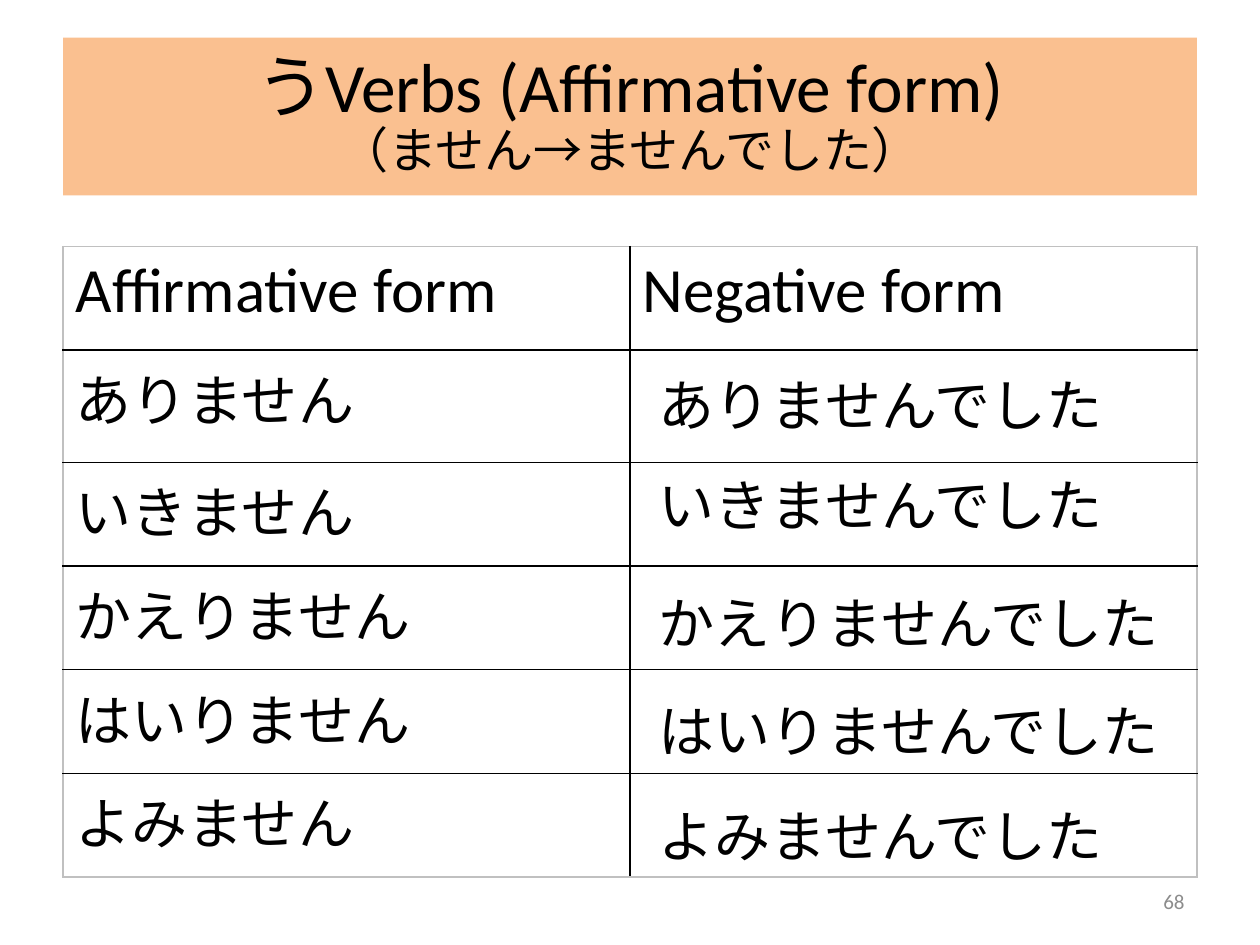
from dataclasses import dataclass

from lxml import etree
from pptx import Presentation
from pptx import util as u
from pptx.dml.color import RGBColor
from pptx.enum import text
from pptx.oxml.ns import qn


@dataclass(frozen=True)
class Theme:
    latin: str = "Calibri"
    japanese: str = "Noto Sans CJK JP"
    ink: str = "000000"
    band: str = "FAC090"
    paper: str = "FFFFFF"
    frame: str = "C0C0C0"
    muted: str = "8C8C8C"
    title: float = 39.6
    subtitle: float = 28
    header: float = 36
    verb: float = 32
    number: float = 12


@dataclass(frozen=True)
class Verb:
    present: str
    past: str
    past_top: float  # centimetres from the slide's top


THEME = Theme()
LEFT, WIDTH = 1.27, 22.86
ROW, FIRST_VERB_ROW = 2.09, 2.26
HEADERS = ("Affirmative form", "Negative form")
VERBS = (
    Verb("ありません", "ありませんでした", 7.34),
    Verb("いきません", "いきませんでした", 9.37),
    Verb("かえりません", "かえりませんでした", 11.73),
    Verb("はいりません", "はいりませんでした", 13.92),
    Verb("よみません", "よみませんでした", 16.03),
)


def add_run(paragraph, words: str, size: float, font: str = THEME.latin,
            color: str = THEME.ink) -> None:
    run = paragraph.add_run()
    run.text = words
    run.font.size = u.Pt(size)
    run.font.name = font
    run.font.bold = False
    run.font.color.rgb = RGBColor.from_string(color)
    east_asian = etree.Element(qn("a:ea"), typeface=THEME.japanese)
    run.font._element.find(qn("a:latin")).addnext(east_asian)


def add_text(slide, left: float, top: float, width: float, height: float):
    shape = slide.shapes.add_textbox(u.Cm(left), u.Cm(top), u.Cm(width), u.Cm(height))
    shape.text_frame.word_wrap = True
    return shape.text_frame


def set_border(cell, side: str, color: str, width: float) -> None:
    properties = cell._tc.get_or_add_tcPr()
    line = etree.SubElement(properties, qn(f"a:{side}"), w=str(u.Pt(width)))
    fill = etree.SubElement(line, qn("a:solidFill"))
    etree.SubElement(fill, qn("a:srgbClr"), val=color)


def draw_title(slide) -> None:
    title = slide.shapes.title
    title.left, title.top = u.Cm(LEFT), u.Cm(0.76)
    title.width, title.height = u.Cm(WIDTH), u.Cm(3.18)
    title.fill.solid()
    title.fill.fore_color.rgb = RGBColor.from_string(THEME.band)
    frame = title.text_frame
    frame.auto_size = text.MSO_AUTO_SIZE.NONE
    frame.vertical_anchor = text.MSO_ANCHOR.MIDDLE
    paragraph = frame.paragraphs[0]
    paragraph.alignment = text.PP_ALIGN.CENTER
    paragraph.line_spacing = 0.87
    add_run(paragraph, "うVerbs (Affirmative form)", THEME.title)
    paragraph.add_line_break()
    add_run(paragraph, "（ません→ませんでした）", THEME.subtitle)


def draw_table(slide) -> None:
    rows, columns = len(VERBS) + 1, len(HEADERS)
    heights = [ROW, FIRST_VERB_ROW] + [ROW] * (rows - 2)
    table = slide.shapes.add_table(rows, columns, u.Cm(LEFT), u.Cm(4.97),
                                   u.Cm(WIDTH), u.Cm(sum(heights))).table
    table.first_row = table.horz_banding = False
    for row, height in zip(table.rows, heights):
        row.height = u.Cm(height)

    # Grey outer frame, black inner rules
    for r in range(rows):
        for c in range(columns):
            cell = table.cell(r, c)
            edges = {"lnL": c == 0, "lnR": c == columns - 1,
                     "lnT": r == 0, "lnB": r == rows - 1}
            for side, outer in edges.items():
                set_border(cell, side, THEME.frame if outer else THEME.ink, 1)
            cell.fill.solid()
            cell.fill.fore_color.rgb = RGBColor.from_string(THEME.paper)

    for c, header in enumerate(HEADERS):
        add_run(table.cell(0, c).text_frame.paragraphs[0], header, THEME.header)
    for r, verb in enumerate(VERBS, start=1):
        add_run(table.cell(r, 0).text_frame.paragraphs[0], verb.present,
                THEME.verb, THEME.japanese)


def draw_past_form(slide, verb: Verb) -> None:
    frame = add_text(slide, 13.03, verb.past_top, 11.1, 1.63)
    frame.auto_size = text.MSO_AUTO_SIZE.SHAPE_TO_FIT_TEXT
    add_run(frame.paragraphs[0], verb.past, THEME.verb, THEME.japanese)


def draw_page_number(slide, number: str) -> None:
    frame = add_text(slide, 18.21, 17.65, 5.92, 1.02)
    frame.vertical_anchor = text.MSO_ANCHOR.MIDDLE
    paragraph = frame.paragraphs[0]
    paragraph.alignment = text.PP_ALIGN.RIGHT
    add_run(paragraph, number, THEME.number, color=THEME.muted)


def main() -> None:
    presentation = Presentation()
    presentation.slide_width, presentation.slide_height = u.Cm(25.4), u.Cm(19.05)
    slide = presentation.slides.add_slide(presentation.slide_layouts[5])
    draw_title(slide)
    draw_page_number(slide, "68")
    draw_table(slide)
    for verb in VERBS:
        draw_past_form(slide, verb)
    presentation.save("out.pptx")


if __name__ == "__main__":
    main()
